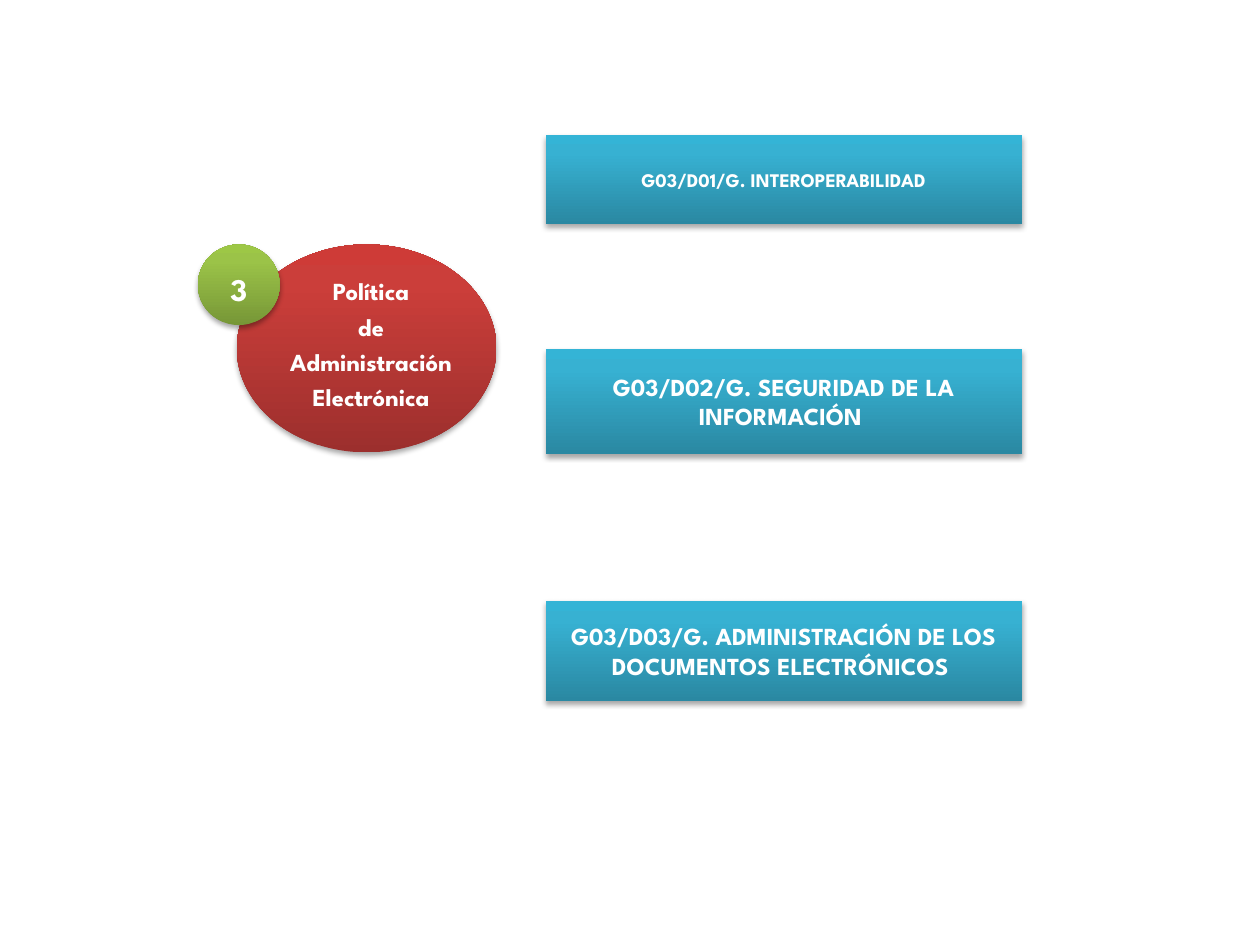
import pptx
import pptx.util
import pptx.dml.color
import pptx.enum.shapes
import pptx.enum.text
import pptx.oxml
import pptx.oxml.ns

Inches, Pt = pptx.util.Inches, pptx.util.Pt
SHAPE = pptx.enum.shapes.MSO_SHAPE
ANCHOR = pptx.enum.text.MSO_ANCHOR
ALIGN = pptx.enum.text.PP_ALIGN

# Content: (text, top, height, text size key)
DIRECTIVES = [
    ("G03/D01/G. INTEROPERABILIDAD", 1.07, 0.71, "small"),
    ("G03/D02/G. SEGURIDAD DE LA INFORMACIÓN ", 2.77, 0.83, "body"),
    ("G03/D03/G. ADMINISTRACIÓN DE LOS DOCUMENTOS ELECTRÓNICOS ", 4.77, 0.79, "body"),
]
POLICY = ["Política", "de", "Administración", "Electrónica"]
POLICY_NUMBER = "3"

# Gradients run from bottom to top
THEME = {
    "font": "League Spartan",
    "text": "FFFFFF",
    "shadow": "000000",
    "directive": ("2A88A2", "37B1D2", "34B4D6"),
    "policy": ("9C2F2D", "CB3E3A", "CE3B37"),
    "number": ("779737", "9BC348", "9DC746"),
    "sizes": {"small": 11, "body": 14, "number": 18},
}
GRADIENT_STOPS = (0, 80, 100)
DIRECTIVE_LEFT, DIRECTIVE_WIDTH = 4.33, 3.78


def add_glossy(shapes, kind, box, colors):
    """Add a shape with a vertical gradient, no outline and a soft shadow."""
    shape = shapes.add_shape(kind, *map(Inches, box))
    shape.line.fill.background()
    shape.shadow.inherit = False
    namespace = pptx.oxml.ns.nsdecls("a")
    stops = "".join(
        f'<a:gs pos="{stop * 1000}"><a:srgbClr val="{color}"/></a:gs>'
        for stop, color in zip(GRADIENT_STOPS, colors))
    gradient = pptx.oxml.parse_xml(
        f'<a:gradFill {namespace} rotWithShape="1"><a:gsLst>{stops}</a:gsLst>'
        '<a:lin ang="16200000" scaled="0"/></a:gradFill>')
    properties = shape.element.spPr
    properties.find(pptx.oxml.ns.qn("a:prstGeom")).addnext(gradient)
    properties.find(pptx.oxml.ns.qn("a:effectLst")).append(pptx.oxml.parse_xml(
        f'<a:outerShdw {namespace} blurRad="{Pt(3.1)}" dist="{Pt(1.8)}" '
        f'dir="5400000" rotWithShape="0"><a:srgbClr val="{THEME["shadow"]}">'
        '<a:alpha val="35000"/></a:srgbClr></a:outerShdw>'))
    return shape


def write(frame, text, size, align):
    frame.text = text
    for paragraph in frame.paragraphs:
        paragraph.alignment = align
        for run in paragraph.runs:
            run.font.name = THEME["font"]
            run.font.size = Pt(THEME["sizes"][size])
            run.font.bold = True
            run.font.color.rgb = pptx.dml.color.RGBColor.from_string(THEME["text"])


def main():
    deck = pptx.Presentation()
    deck.slide_width, deck.slide_height = Inches(10), Inches(7.5)
    slide = deck.slides.add_slide(deck.slide_layouts[6])

    # Directives
    for text, top, height, size in DIRECTIVES:
        directive = add_glossy(
            slide.shapes, SHAPE.RECTANGLE,
            (DIRECTIVE_LEFT, top, DIRECTIVE_WIDTH, height), THEME["directive"])
        directive.text_frame.word_wrap = True
        directive.text_frame.vertical_anchor = ANCHOR.MIDDLE
        write(directive.text_frame, text, size, ALIGN.CENTER)

    # Policy ellipse with its label
    policy = slide.shapes.add_group_shape().shapes
    add_glossy(policy, SHAPE.OVAL, (1.88, 1.94, 2.06, 1.65), THEME["policy"])
    policy_label = policy.add_textbox(*map(Inches, (2.05, 2.17, 1.79, 1.21))).text_frame
    policy_label.word_wrap = True
    write(policy_label, "\n".join(POLICY), "body", ALIGN.CENTER)
    for paragraph in policy_label.paragraphs:
        paragraph.line_spacing = 0.9
        paragraph.space_after = Pt(5)

    # Number badge
    badge = slide.shapes.add_group_shape().shapes
    add_glossy(badge, SHAPE.OVAL, (1.57, 1.94, 0.65, 0.64), THEME["number"])
    number = badge.add_textbox(*map(Inches, (1.73, 2.09, 0.3, 0.4))).text_frame
    number.auto_size = pptx.enum.text.MSO_AUTO_SIZE.SHAPE_TO_FIT_TEXT
    write(number, POLICY_NUMBER, "number", ALIGN.LEFT)

    deck.save("out.pptx")


if __name__ == "__main__":
    main()
